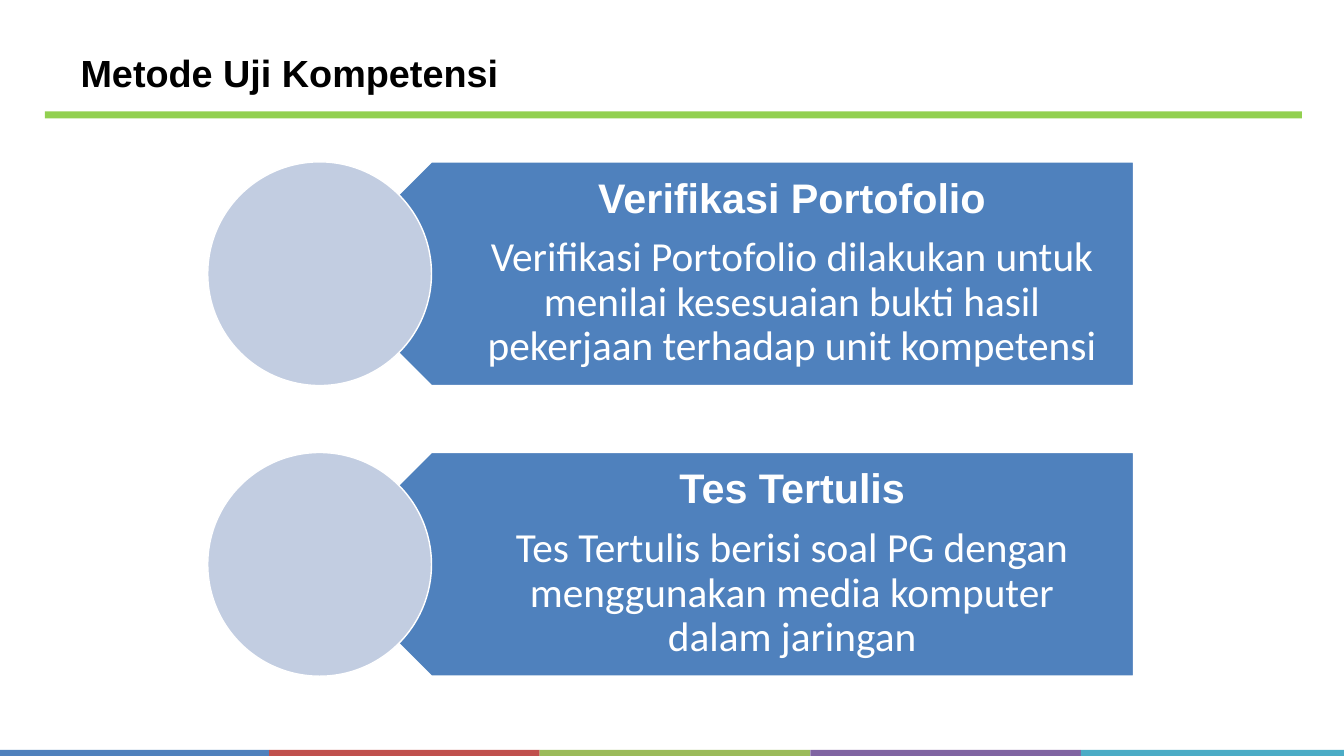
from pptx import Presentation
from pptx.dml.color import RGBColor
from pptx.enum.shapes import MSO_SHAPE
from pptx.enum.text import MSO_ANCHOR, MSO_AUTO_SIZE, PP_ALIGN
from pptx.util import Pt

COLORS = {
    "blue": "4F81BD", "red": "C0504D", "green": "9BBB59",
    "purple": "8064A2", "teal": "4BACC6", "lime": "92D050",
    "pale": "C2CDE1", "white": "FFFFFF", "black": "000000",
}


def add_block(kind, left, top, width, height, fill, outlined=False):
    block = slide.shapes.add_shape(kind, Pt(left), Pt(top), Pt(width), Pt(height))
    block.shadow.inherit = False
    block.fill.solid()
    block.fill.fore_color.rgb = RGBColor.from_string(COLORS[fill])
    if outlined:
        block.line.color.rgb = RGBColor.from_string(COLORS["white"])
        block.line.width = Pt(2)
    else:
        block.line.fill.background()
    return block


def write(paragraph, text, *, size, color, font="Arial", bold=False,
          align=PP_ALIGN.LEFT, line_spacing=1.0, after=0):
    paragraph.alignment = align
    paragraph.line_spacing = line_spacing
    paragraph.space_before = Pt(0)
    paragraph.space_after = Pt(after)
    run = paragraph.add_run()
    run.text = text
    run.font.name = font
    run.font.size = Pt(size)
    run.font.bold = bold
    run.font.color.rgb = RGBColor.from_string(COLORS[color])


presentation = Presentation()
presentation.slide_width = Pt(1920)
presentation.slide_height = Pt(1080)
slide = presentation.slides.add_slide(presentation.slide_layouts[5])

# Footer band
segment_width = 386.5
for index, color in enumerate(["blue", "red", "green", "purple", "teal"]):
    add_block(MSO_SHAPE.RECTANGLE, -2 + index * segment_width, 1071.4,
              segment_width, 14.4, color)

# Title and its rule
add_block(MSO_SHAPE.RECTANGLE, 64, 159, 1796, 10, "lime")
title = slide.shapes.title
title.left, title.top, title.width, title.height = Pt(111), Pt(62.6), Pt(1627), Pt(93.6)
heading = title.text_frame
heading.auto_size = MSO_AUTO_SIZE.NONE
heading.vertical_anchor = MSO_ANCHOR.TOP
heading.margin_left, heading.margin_top = Pt(4), Pt(8)
write(heading.paragraphs[0], "Metode Uji Kompetensi", size=54, color="black", bold=True)

# Assessment methods: arrow, wording, circle
methods = [
    ("Verifikasi Portofolio",
     "Verifikasi Portofolio dilakukan untuk menilai kesesuaian bukti hasil "
     "pekerjaan terhadap unit kompetensi"),
    ("Tes Tertulis",
     "Tes Tertulis berisi soal PG dengan menggunakan media komputer dalam jaringan"),
]
diameter = 319.6
circle_left = 296.8
arrow_left = circle_left + diameter / 2
arrow_right = 1619.3
text_left = 536.4
first_top, row_pitch = 231.2, 415.2

for index, (method, description) in enumerate(methods):
    top = first_top + index * row_pitch
    arrow = add_block(MSO_SHAPE.PENTAGON, arrow_left, top,
                      arrow_right - arrow_left, diameter, "blue", outlined=True)
    arrow.rotation = 180

    wording = slide.shapes.add_textbox(Pt(text_left), Pt(top),
                                       Pt(arrow_right - text_left), Pt(diameter)).text_frame
    wording.word_wrap = True
    wording.vertical_anchor = MSO_ANCHOR.MIDDLE
    wording.margin_left, wording.margin_right = Pt(141), Pt(33)
    wording.margin_top = wording.margin_bottom = Pt(18)
    style = dict(size=59, color="white", align=PP_ALIGN.CENTER, line_spacing=0.9, after=20)
    write(wording.paragraphs[0], method, bold=True, **style)
    write(wording.add_paragraph(), description, font="Calibri", **style)

    add_block(MSO_SHAPE.OVAL, circle_left, top, diameter, diameter, "pale", outlined=True)

presentation.save("out.pptx")
